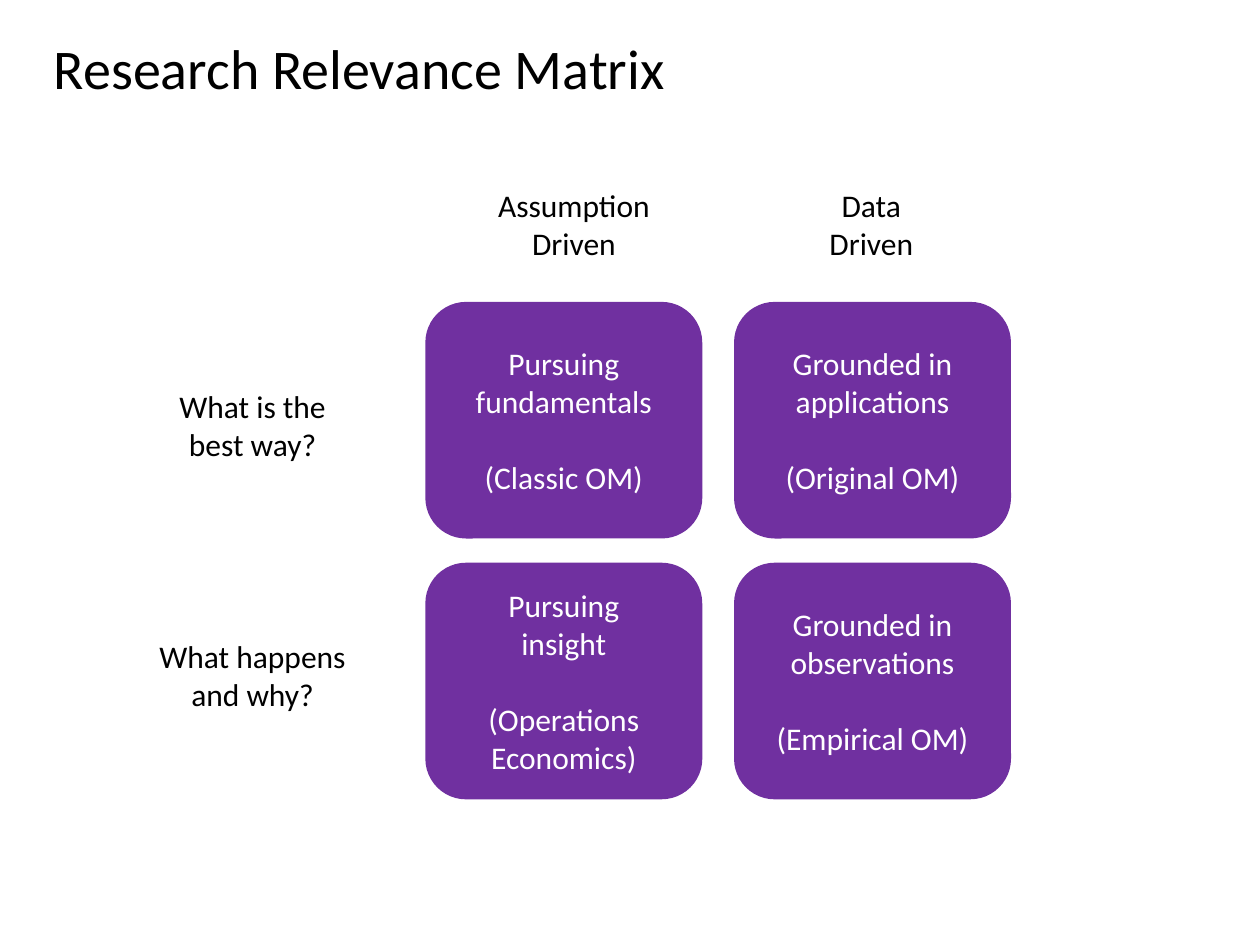
"""Build the Research Relevance Matrix slide."""
import pptx
import pptx.util
import pptx.dml.color
import pptx.enum.shapes
import pptx.enum.text

Inches = pptx.util.Inches
Pt = pptx.util.Pt
RGBColor = pptx.dml.color.RGBColor
Align = pptx.enum.text.PP_ALIGN
Anchor = pptx.enum.text.MSO_ANCHOR

PURPLE = RGBColor(0x70, 0x30, 0xA0)
WHITE = RGBColor(0xFF, 0xFF, 0xFF)
BLACK = RGBColor(0x00, 0x00, 0x00)

LEFT, TOP = 3.39, 2.41
WIDE, HIGH = 2.17, 1.85
STEP_X, STEP_Y = 2.45, 2.07

CELLS = [
    [("Pursuing fundamentals", "(Classic OM)"),
     ("Grounded in applications", "(Original OM)")],
    [("Pursuing\ninsight", "(Operations\nEconomics)"),
     ("Grounded in observations", "(Empirical OM)")],
]
HEADS = [("Assumption\nDriven", 3.76), ("Data\nDriven", 6.12)]
ROWS = [("What is the best way?", 1.21, 3.02, 1.59),
        ("What happens and why?", 1.14, 5.01, 1.73)]


def write(frame, *parts, size=18, color=BLACK, align=Align.CENTER,
          wrap=True, gap=22):
    """Fill a frame with parts, one paragraph a line and a gap between parts."""
    frame.word_wrap = wrap
    para = None
    for part in parts:
        for row, line in enumerate(part.split("\n")):
            first = para is None
            para = frame.paragraphs[0] if first else frame.add_paragraph()
            if row == 0 and not first:
                para.space_before = Pt(gap)
            para.alignment = align
            run = para.add_run()
            run.text = line
            run.font.name = "Calibri"
            run.font.size = Pt(size)
            run.font.color.rgb = color


def label(slide, words, x, y, w, h=0.71, **form):
    """Add a plain text box."""
    box = slide.shapes.add_textbox(Inches(x), Inches(y), Inches(w), Inches(h))
    write(box.text_frame, words, **form)


def cell(slide, parts, x, y):
    """Add a rounded purple matrix cell."""
    kind = pptx.enum.shapes.MSO_SHAPE.ROUNDED_RECTANGLE
    box = slide.shapes.add_shape(kind, Inches(x), Inches(y),
                                 Inches(WIDE), Inches(HIGH))
    box.shadow.inherit = False
    box.fill.solid()
    box.fill.fore_color.rgb = PURPLE
    box.line.color.rgb = PURPLE
    box.line.width = Pt(2)
    box.text_frame.vertical_anchor = Anchor.MIDDLE
    write(box.text_frame, *parts, color=WHITE)


def main():
    """Build and save the slide."""
    deck = pptx.Presentation()
    deck.slide_width, deck.slide_height = Inches(10), Inches(7.5)
    slide = deck.slides.add_slide(deck.slide_layouts[6])

    label(slide, "Research Relevance Matrix", 0.33, 0.22, 5.1, 0.64,
          size=32, align=Align.LEFT, wrap=False)
    for words, x in HEADS:
        label(slide, words, x, 1.43, 1.59)
    for words, x, y, w in ROWS:
        label(slide, words, x, y, w)
    for row, pair in enumerate(CELLS):
        for col, parts in enumerate(pair):
            cell(slide, parts, LEFT + col * STEP_X, TOP + row * STEP_Y)

    deck.save("out.pptx")


if __name__ == "__main__":
    main()
